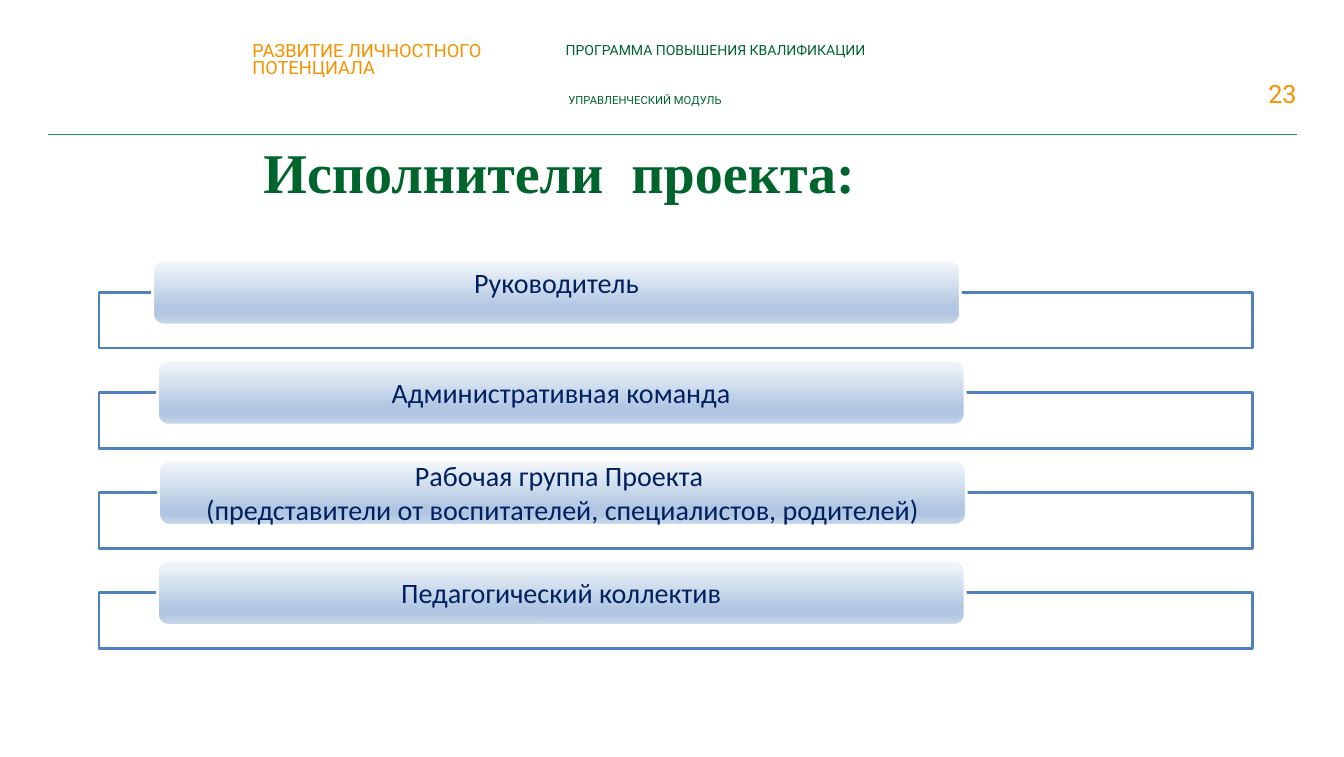
from lxml import etree
from pptx import Presentation
from pptx.dml.color import RGBColor
from pptx.enum.shapes import MSO_CONNECTOR, MSO_SHAPE
from pptx.enum.text import MSO_ANCHOR, MSO_AUTO_SIZE, PP_ALIGN
from pptx.oxml.ns import qn
from pptx.util import Cm, Pt

STRAIGHT = MSO_CONNECTOR.STRAIGHT
RECTANGLE, ROUNDED = MSO_SHAPE.RECTANGLE, MSO_SHAPE.ROUNDED_RECTANGLE
TOP, MIDDLE = MSO_ANCHOR.TOP, MSO_ANCHOR.MIDDLE
LEFT, CENTER, RIGHT = PP_ALIGN.LEFT, PP_ALIGN.CENTER, PP_ALIGN.RIGHT
TITLE_ONLY = 5

COLORS = {
    "orange": "F69200", "green": "00642D", "rule": "22974F",
    "frame": "4F81BD", "white": "FFFFFF", "navy": "002060",
}
BAR_GRADIENT = [(0, "F6F9FC"), (74, "B0C6E1"), (83, "B0C6E1"), (100, "CAD9EB")]

# Performers: lines of the label, indent of the bar in cm, anchor of the text
PERFORMERS = [
    (["Руководитель"], 1.35, TOP),
    (["Административная команда"], 1.47, MIDDLE),
    (["Рабочая группа Проекта ",
      "(представители от воспитателей, специалистов, родителей)"], 1.5, MIDDLE),
    (["Педагогический коллектив"], 1.47, MIDDLE),
]


def rgb(name):
    return RGBColor.from_string(COLORS[name])


def write(frame, lines, size, font, color, align=LEFT, bold=False, spacing=None,
          insets=(0, 0, 0, 0), **frame_format):
    """Fill a text frame; insets are left, top, right, bottom in cm."""
    for side, inset in zip(("left", "top", "right", "bottom"), insets):
        setattr(frame, f"margin_{side}", Cm(inset))
    for key, value in {"word_wrap": True, "vertical_anchor": TOP, **frame_format}.items():
        setattr(frame, key, value)
    for index, line in enumerate(lines):
        paragraph = frame.paragraphs[0] if index == 0 else frame.add_paragraph()
        paragraph.alignment = align
        paragraph.line_spacing = spacing
        run = paragraph.add_run()
        run.text = line
        for key, value in {"size": Pt(size), "name": font, "bold": bold}.items():
            setattr(run.font, key, value)
        run.font.color.rgb = rgb(color)


def add_header(slide, left, top, width, height):
    """Programme captions and page number above a rule."""
    captions = [
        ("РАЗВИТИЕ ЛИЧНОСТНОГО ПОТЕНЦИАЛА", 5.15, 0, 7.67, 0.89, 13, "orange", LEFT, 0.8),
        ("ПРОГРАММА ПОВЫШЕНИЯ КВАЛИФИКАЦИИ", 13.03, -0.05, 7.92, 0.43, 10, "green", LEFT, None),
        ("УПРАВЛЕНЧЕСКИЙ МОДУЛЬ", 13.1, 1.27, 5.77, 0.33, 8, "green", LEFT, None),
        ("23", width - 2.08, 0.89, 2.08, 0.76, 18, "orange", RIGHT, None),
    ]
    for text, x, y, w, h, size, color, align, spacing in captions:
        caption = slide.shapes.add_textbox(Cm(left + x), Cm(top + y), Cm(w), Cm(h))
        write(caption.text_frame, [text], size, "Roboto", color, align, spacing=spacing)

    bottom = Cm(top + height)
    rule = slide.shapes.add_connector(STRAIGHT, Cm(left), bottom, Cm(left + width), bottom)
    rule.line.color.rgb = rgb("rule")
    rule.line.width = Pt(1)
    etree.SubElement(rule._element.spPr, qn("a:effectLst"))


def add_title(slide, left, top, width, height):
    title = slide.shapes.title
    box = {"left": left, "top": top, "width": width, "height": height}
    for key, value in box.items():
        setattr(title, key, Cm(value))
    write(title.text_frame, ["Исполнители  проекта:"], 40, "Times New Roman", "green",
          CENTER, bold=True, insets=(0.25, 0.13, 0.25, 0.13),
          word_wrap=False, auto_size=MSO_AUTO_SIZE.NONE)


def add_block(slide, preset, left, top, width, height, outline):
    block = slide.shapes.add_shape(preset, Cm(left), Cm(top), Cm(width), Cm(height))
    block.shadow.inherit = False
    block.line.color.rgb = rgb(outline)
    block.line.width = Pt(2)
    return block


def fill_gradient(bar):
    bar.fill.gradient()
    bar.fill.gradient_angle = 270
    stops = bar._element.spPr.find(qn("a:gradFill")).find(qn("a:gsLst"))
    for stop in list(stops):
        stops.remove(stop)
    for percent, color in BAR_GRADIENT:
        stop = etree.SubElement(stops, qn("a:gs"), pos=str(percent * 1000))
        etree.SubElement(stop, qn("a:srgbClr"), val=color)


def add_performers(slide, left, top, width, pitch):
    """Outlined frames, each with a labelled bar across its top edge."""
    bar_width, bar_height, frame_height, overlap = 20.32, 1.65, 1.4, 0.83
    for row, (label, indent, anchor) in enumerate(PERFORMERS):
        y = top + row * pitch
        frame = add_block(slide, RECTANGLE, left, y + overlap, width, frame_height, "frame")
        frame.fill.solid()
        frame.fill.fore_color.rgb = rgb("white")
        white = frame._element.spPr.find(qn("a:solidFill")).find(qn("a:srgbClr"))
        etree.SubElement(white, qn("a:alpha"), val="90000")

        bar = add_block(slide, ROUNDED, left + indent, y, bar_width, bar_height, "white")
        fill_gradient(bar)
        write(bar.text_frame, label, 20, "Calibri", "navy", CENTER,
              insets=(0.84, 0.08, 0.84, 0.08), vertical_anchor=anchor)


def main():
    deck = Presentation()
    deck.slide_width, deck.slide_height = Cm(33.81), Cm(19.05)
    slide = deck.slides.add_slide(deck.slide_layouts[TITLE_ONLY])
    add_header(slide, 1.2, 1.09, 31.42, 2.3)
    add_title(slide, 6.3, 3.33, 15.54, 1.96)
    add_performers(slide, 2.49, 6.53, 29.03, 2.52)
    deck.save("out.pptx")


if __name__ == "__main__":
    main()
